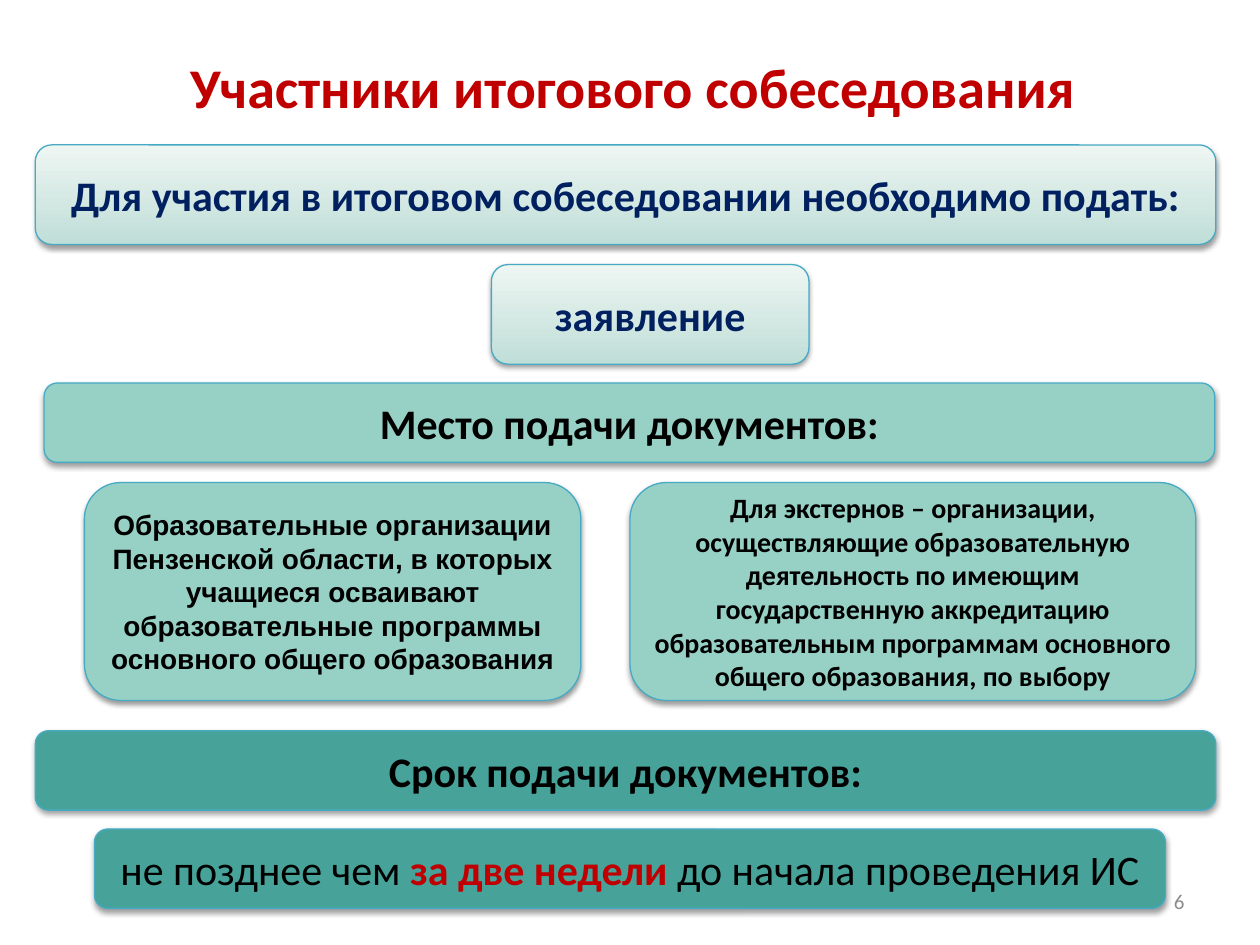
from lxml import etree
from pptx import Presentation
from pptx.dml.color import RGBColor
from pptx.enum.shapes import MSO_SHAPE
from pptx.enum.text import MSO_ANCHOR, PP_ALIGN
from pptx.oxml import parse_xml
from pptx.oxml.ns import nsdecls, qn
from pptx.util import Inches, Pt

ROUNDED = MSO_SHAPE.ROUNDED_RECTANGLE
MIDDLE = MSO_ANCHOR.MIDDLE
CENTER, RIGHT = PP_ALIGN.CENTER, PP_ALIGN.RIGHT

RED = RGBColor(0xC0, 0x00, 0x00)
NAVY = RGBColor(0x00, 0x20, 0x60)
BLACK = RGBColor(0x00, 0x00, 0x00)
GRAY = RGBColor(0x8C, 0x8C, 0x8C)
BORDER = RGBColor(0x46, 0xAA, 0xC5)
MINT = RGBColor(0x97, 0xD1, 0xC6)
TEAL = RGBColor(0x47, 0xA3, 0x9A)
PALE_BOTTOM = RGBColor(0xC0, 0xDE, 0xD8)
PALE_TOP = RGBColor(0xEE, 0xF6, 0xF2)
PALE = (PALE_BOTTOM, PALE_TOP)

SHADOW = (
    f'<a:outerShdw {nsdecls("a")} blurRad="{Pt(3.1)}" dist="{Pt(1.6)}" dir="5400000" '
    'rotWithShape="0"><a:srgbClr val="000000"><a:alpha val="38000"/></a:srgbClr></a:outerShdw>'
)


def write(sp, runs, size, align=CENTER, font="Calibri"):
    """Fill a shape with one paragraph of (text, colour, bold) runs."""
    tf = sp.text_frame
    tf.word_wrap = True
    tf.vertical_anchor = MIDDLE
    p = tf.paragraphs[0]
    p.alignment = align
    for text, color, bold in runs:
        r = p.add_run()
        r.text = text
        r.font.name = font
        r.font.size = Pt(size)
        r.font.bold = bold
        r.font.color.rgb = color


prs = Presentation()
prs.slide_width, prs.slide_height = Inches(10), Inches(7.5)
s = prs.slides.add_slide(prs.slide_layouts[6])

title = s.shapes.add_textbox(Inches(0.91), Inches(0.36), Inches(8.23), Inches(0.65))
write(title, [("Участники итогового собеседования", RED, True)], 32)

# left, top, width, height, fill, text size, font, runs
boxes = [
    (0.28, 1.15, 9.37, 0.79, PALE, 24, "Calibri",
     [("Для участия в итоговом собеседовании необходимо подать:", NAVY, True)]),
    (3.9, 2.1, 2.52, 0.79, PALE, 24, "Calibri", [("заявление", NAVY, True)]),
    (0.35, 3.04, 9.29, 0.63, MINT, 24, "Calibri",
     [("Место подачи документов:", BLACK, True)]),
    (0.67, 3.83, 3.94, 1.73, MINT, 16, "Arial",
     [("Образовательные организации Пензенской области, в которых учащиеся осваивают "
       "образовательные программы основного общего образования", BLACK, True)]),
    (5, 3.83, 4.49, 1.73, MINT, 16, "Calibri",
     [("Для экстернов – организации, осуществляющие образовательную деятельность "
       "по имеющим государственную аккредитацию образовательным программам основного "
       "общего образования, по выбору", BLACK, True)]),
    (0.28, 5.8, 9.37, 0.63, TEAL, 24, "Calibri",
     [("Срок подачи документов:", BLACK, True)]),
    (0.75, 6.58, 8.5, 0.63, TEAL, 24, "Calibri",
     [("не позднее чем ", BLACK, False),
      ("за две недели ", RED, True),
      ("до начала проведения ИС", BLACK, False)]),
]

for left, top, width, height, fill, size, font, runs in boxes:
    sp = s.shapes.add_shape(ROUNDED, Inches(left), Inches(top), Inches(width), Inches(height))
    if fill is PALE:
        sp.fill.gradient()
        sp.fill.gradient_angle = 90
        for stop, color in zip(sp.fill.gradient_stops, PALE):
            stop.color.rgb = color
    else:
        sp.fill.solid()
        sp.fill.fore_color.rgb = fill
    sp.line.color.rgb = BORDER
    sp.line.width = Pt(0.75)
    sp.shadow.inherit = False
    effects = sp._element.spPr.find(qn("a:effectLst"))
    effects.append(parse_xml(SHADOW))
    write(sp, runs, size, font=font)

number = s.shapes.add_textbox(Inches(7.17), Inches(6.95), Inches(2.33), Inches(0.4))
write(number, [("6", GRAY, False)], 12, align=RIGHT)

prs.save("out.pptx")
